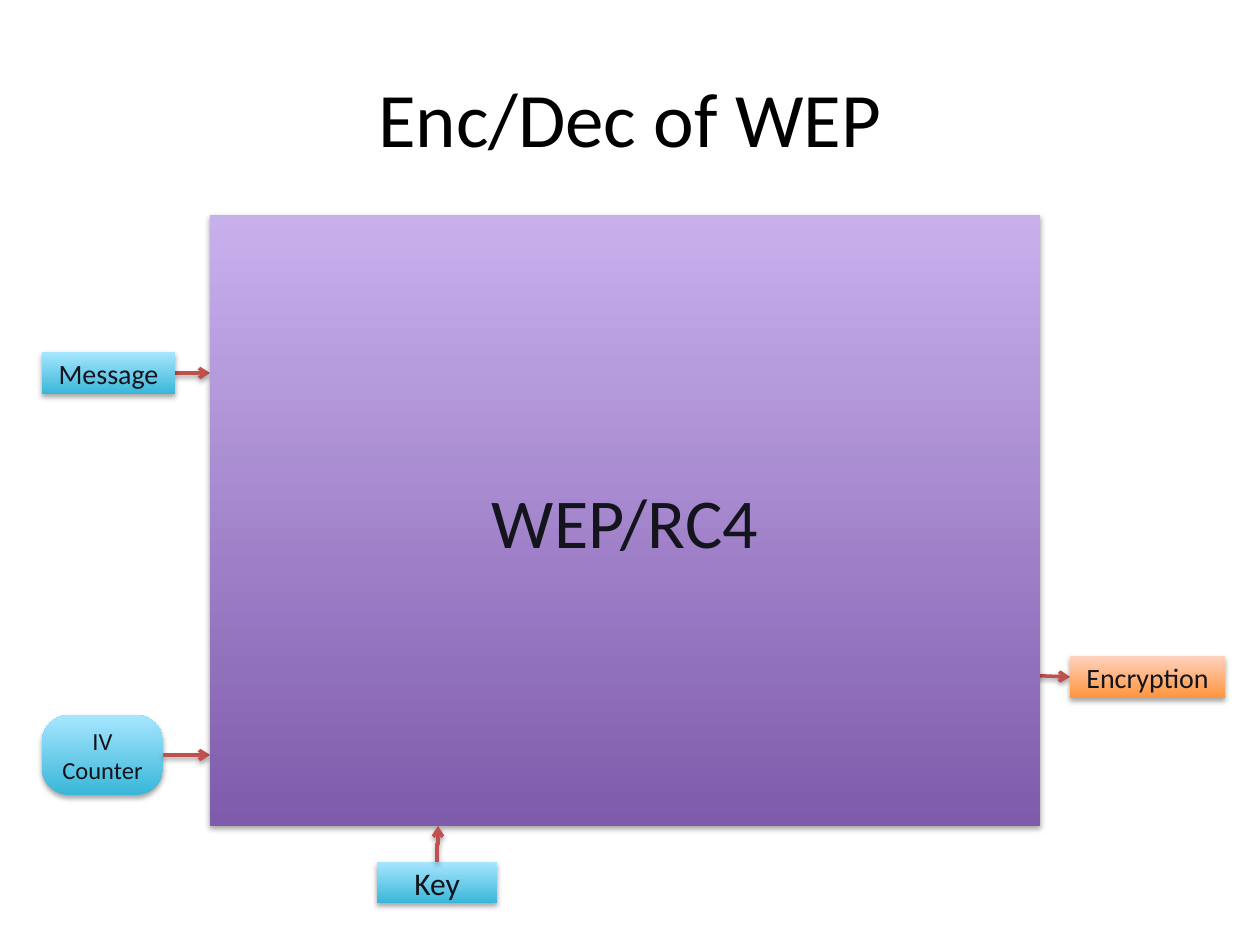
import pptx
import pptx.dml.color
import pptx.enum.shapes
import pptx.enum.text
import pptx.oxml
import pptx.oxml.ns
import pptx.util

RGB = pptx.dml.color.RGBColor
SHAPE = pptx.enum.shapes.MSO_SHAPE
CONNECTOR = pptx.enum.shapes.MSO_CONNECTOR

BLACK = RGB(0x00, 0x00, 0x00)
INK = RGB(0x13, 0x14, 0x1C)
RED = RGB(0xC0, 0x50, 0x4D)
# Gradients run from the bottom colour to the top colour
BLUE = (RGB(0x39, 0xB7, 0xD8), RGB(0xA7, 0xE6, 0xFF))
PURPLE = (RGB(0x7F, 0x5B, 0xAB), RGB(0xC8, 0xB0, 0xED))
ORANGE = (RGB(0xFF, 0x95, 0x3E), RGB(0xFF, 0xD2, 0xBD))

FONT = "Calibri"
PX = 914400 / 126
TITLE = ("Enc/Dec of WEP", (63, 38, 1134, 157), 44)

# name: text, place in px, text size, gradient, preset shape
BOXES = {
    "counter": ("IV Counter", (42, 715, 121, 80), 14, BLUE, SHAPE.ROUNDED_RECTANGLE),
    "cipher": ("WEP/RC4", (210, 215, 830, 611), 40, PURPLE, SHAPE.RECTANGLE),
    "message": ("Message", (42, 352, 133, 42), 16, BLUE, SHAPE.RECTANGLE),
    "encryption": ("Encryption", (1070, 656, 155, 42), 16, ORANGE, SHAPE.RECTANGLE),
    "key": ("Key", (377, 862, 120, 41), 18, BLUE, SHAPE.RECTANGLE),
}

# kind, from, to, joined start (box, side), joined end (box, side)
ARROWS = [
    (CONNECTOR.ELBOW, (163, 755), (210, 755), None, None),
    (CONNECTOR.STRAIGHT, (175, 373), (210, 373), ("message", 3), None),
    (CONNECTOR.STRAIGHT, (1021, 675), (1070, 677), None, ("encryption", 1)),
]
KEY_ARROW = ((437, 862), (438, 826))


def emu(*lengths):
    return [round(length * PX) for length in lengths]


def add_shadow(item, opacity, distance):
    blur, offset = pptx.util.Pt(3.1), pptx.util.Pt(distance)
    item._element.spPr.append(pptx.oxml.parse_xml(
        f'<a:effectLst {pptx.oxml.ns.nsdecls("a")}>'
        f'<a:outerShdw blurRad="{blur}" dist="{offset}" dir="5400000" rotWithShape="0">'
        f'<a:srgbClr val="000000"><a:alpha val="{opacity * 1000}"/></a:srgbClr>'
        '</a:outerShdw></a:effectLst>'))


def write(shape, text, size, color):
    frame = shape.text_frame
    frame.word_wrap = True
    frame.vertical_anchor = pptx.enum.text.MSO_ANCHOR.MIDDLE
    para = frame.paragraphs[0]
    para.text = text
    para.alignment = pptx.enum.text.PP_ALIGN.CENTER
    para.font.name = FONT
    para.font.size = pptx.util.Pt(size)
    para.font.color.rgb = color


def add_box(page, text, place, size, gradient, preset):
    box = page.shapes.add_shape(preset, *emu(*place))
    box.fill.gradient()
    box.fill.gradient_angle = 90
    for stop, color, position in zip(box.fill.gradient_stops, gradient, (0, 1)):
        stop.color.rgb = color
        stop.position = position
    box.line.fill.background()
    add_shadow(box, 35, 1.8)
    write(box, text, size, INK)
    return box


def add_arrow(page, kind, start, end):
    arrow = page.shapes.add_connector(kind, *emu(*start, *end))
    arrow.line.color.rgb = RED
    arrow.line.width = pptx.util.Pt(2)
    arrow.line._get_or_add_ln().append(pptx.oxml.parse_xml(
        f'<a:tailEnd {pptx.oxml.ns.nsdecls("a")} type="arrow"/>'))
    add_shadow(arrow, 38, 1.6)
    return arrow


def add_upward_elbow(page, start, end):
    # An elbow leaves sideways, so lay it flat and turn it a quarter
    middle_x, middle_y = (start[0] + end[0]) / 2, (start[1] + end[1]) / 2
    reach, shift = (start[1] - end[1]) / 2, (end[0] - start[0]) / 2
    arrow = add_arrow(page, CONNECTOR.ELBOW,
                      (middle_x + reach, middle_y + shift),
                      (middle_x - reach, middle_y - shift))
    arrow._element.spPr.xfrm.set("rot", "5400000")


def main():
    deck = pptx.Presentation()
    deck.slide_width, deck.slide_height = emu(1260, 945)
    page = deck.slides.add_slide(deck.slide_layouts[6])

    # Title
    text, place, size = TITLE
    write(page.shapes.add_textbox(*emu(*place)), text, size, BLACK)

    # Boxes
    boxes = {name: add_box(page, *details) for name, details in BOXES.items()}
    counter = boxes["counter"]
    counter.adjustments[0] = 0.34
    frame = counter.text_frame
    frame.margin_left = frame.margin_right = frame.margin_top = frame.margin_bottom = 0

    # Arrows, kept behind the cipher box
    for kind, start, end, source, target in ARROWS:
        arrow = add_arrow(page, kind, start, end)
        if source:
            arrow.begin_connect(boxes[source[0]], source[1])
        if target:
            arrow.end_connect(boxes[target[0]], target[1])
        boxes["cipher"]._element.addprevious(arrow._element)
    add_upward_elbow(page, *KEY_ARROW)

    deck.save("out.pptx")


if __name__ == "__main__":
    main()
